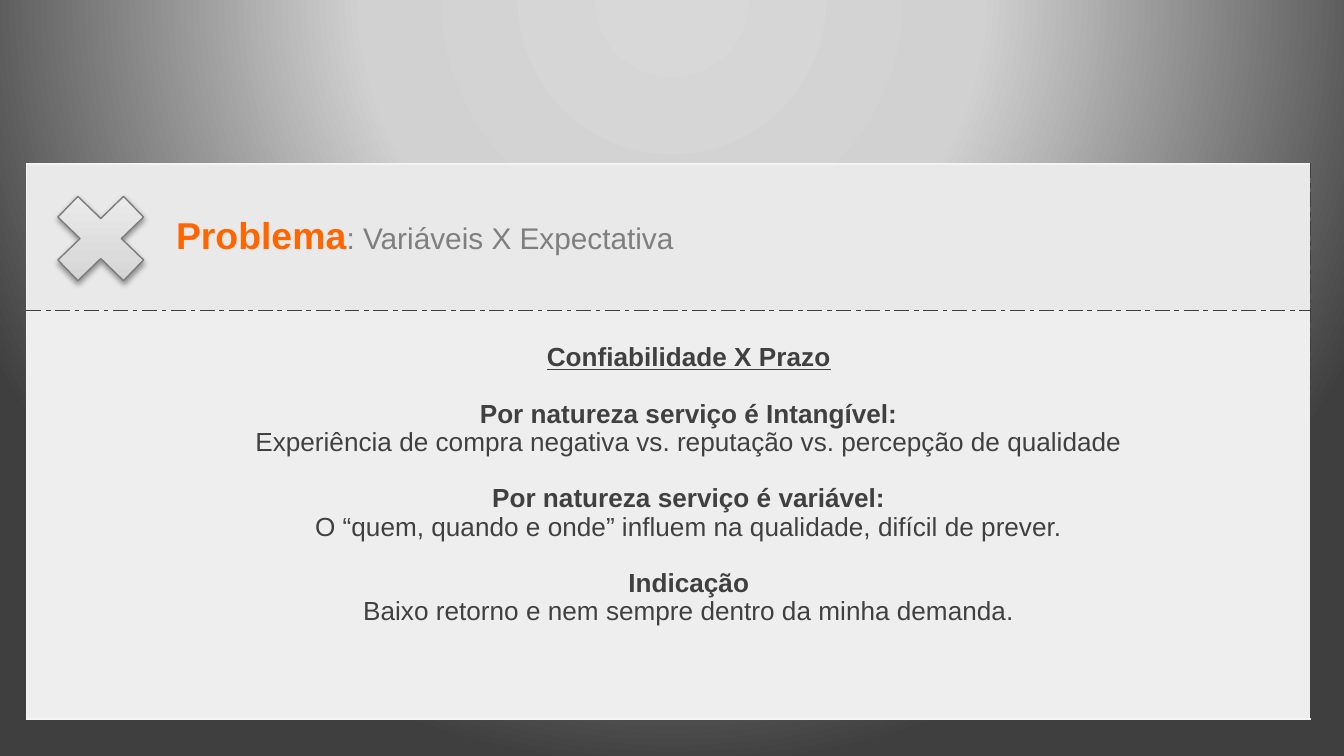
"""Build the slide on the reliability versus deadline problem."""
from lxml.etree import SubElement
from pptx import Presentation
from pptx.dml.color import RGBColor
from pptx.enum.shapes import MSO_SHAPE
from pptx.enum.text import MSO_ANCHOR, PP_ALIGN
from pptx.oxml.ns import qn
from pptx.util import Inches, Pt

ORANGE = RGBColor(0xFF, 0x66, 0x00)
GREY = RGBColor(0x7F, 0x7F, 0x7F)
DARK = RGBColor(0x40, 0x40, 0x40)
OUTLINE = RGBColor(0x7C, 0x7C, 0x7C)
HEADER_FILL = RGBColor(0xE9, 0xE9, 0xE9)
BODY_FILL = RGBColor(0xEE, 0xEE, 0xEE)
PALE_EDGE = RGBColor(0xF4, 0xF4, 0xF4)
DARK_EDGE = RGBColor(0x3F, 0x3F, 0x3F)
BLACK = RGBColor(0, 0, 0)
BACKDROP = [(0, RGBColor(0xD8, 0xD8, 0xD8)), (40, RGBColor(0xD1, 0xD1, 0xD1)), (100, DARK_EDGE)]
CROSS_FILL = [(0, RGBColor(0xCC, 0xCC, 0xCC)), (35, RGBColor(0xDB, 0xDB, 0xDB)),
              (100, RGBColor(0xF1, 0xF1, 0xF1))]

TITLE = [("Problema", 20, ORANGE, True), (": Variáveis X Expectativa", 16, GREY, False)]
HEADING = "Confiabilidade X Prazo"
POINTS = [
    ("Por natureza serviço é Intangível:",
     "Experiência de compra negativa vs. reputação vs. percepção de qualidade"),
    ("Por natureza serviço é variável:",
     "O “quem, quando e onde” influem na qualidade, difícil de prever."),
    ("Indicação", "Baixo retorno e nem sempre dentro da minha demanda."),
]
COLUMNS = [1.05, 8.5]
ROWS = [1.09, 3.04]
PALE = (PALE_EDGE, 0.75, "solid")
DASHED = (DARK_EDGE, 0.25, "sysDashDot")
BORDERS = {
    (0, 0): {"L": PALE, "T": PALE, "B": DASHED},
    (0, 1): {"R": DASHED, "T": PALE, "B": DASHED},
    (1, 0): {"L": PALE, "R": DASHED, "T": DASHED, "B": PALE},
    (1, 1): {"R": DASHED, "T": DASHED, "B": PALE},
}


def add_color(parent, color, alpha=None):
    tone = SubElement(parent, qn("a:srgbClr"), val=str(color))
    if alpha is not None:
        SubElement(tone, qn("a:alpha"), val=str(alpha * 1000))


def set_gradient(fill, owner, stops):
    fill.gradient()
    gradient = owner.find(".//" + qn("a:gradFill"))
    for child in list(gradient):
        gradient.remove(child)
    stop_list = SubElement(gradient, qn("a:gsLst"))
    for position, color in stops:
        add_color(SubElement(stop_list, qn("a:gs"), pos=str(position * 1000)), color)
    return gradient


def set_borders(cell, edges):
    properties = cell._tc.get_or_add_tcPr()
    for index, side in enumerate("LRTB"):
        line = SubElement(properties, qn(f"a:ln{side}"))
        properties.insert(index, line)
        if side not in edges:
            SubElement(line, qn("a:noFill"))
            continue
        color, width, dash = edges[side]
        line.set("w", str(Pt(width)))
        add_color(SubElement(line, qn("a:solidFill")), color)
        SubElement(line, qn("a:prstDash"), val=dash)


def add_run(paragraph, text, size, color, bold, underline=False):
    run = paragraph.add_run()
    run.text = text
    font = run.font
    font.name, font.size, font.bold, font.underline = "Arial", Pt(size), bold, underline
    font.color.rgb = color


def main():
    presentation = Presentation()
    presentation.slide_width = Inches(10)
    presentation.slide_height = presentation.slide_width * 9 // 16
    slide = presentation.slides.add_slide(presentation.slide_layouts[6])
    backdrop = set_gradient(slide.background.fill, slide.element, BACKDROP)
    circle = SubElement(backdrop, qn("a:path"), path="circle")
    SubElement(circle, qn("a:fillToRect"), l="50000", t="-80000", r="50000", b="180000")

    panel = slide.shapes.add_table(2, 2, Inches(0.2), Inches(1.22),
                                   Inches(sum(COLUMNS)), Inches(sum(ROWS))).table
    panel.first_row = panel.horz_banding = False
    for column, width in zip(panel.columns, COLUMNS):
        column.width = Inches(width)
    for row, height in zip(panel.rows, ROWS):
        row.height = Inches(height)
    for (row, column), edges in BORDERS.items():
        cell = panel.cell(row, column)
        cell.fill.solid()
        cell.fill.fore_color.rgb = BODY_FILL if row else HEADER_FILL
        cell.margin_left = cell.margin_right = Inches(0.06)
        cell.margin_top = cell.margin_bottom = Inches(0.03)
        set_borders(cell, edges)

    header = panel.cell(0, 1)
    header.vertical_anchor = MSO_ANCHOR.MIDDLE
    title = header.text_frame.paragraphs[0]
    title.line_spacing = 0.96
    for part in TITLE:
        add_run(title, *part)

    body = panel.cell(1, 0)
    body.merge(panel.cell(1, 1))
    body.margin_top = Inches(0.25)
    lines = [(HEADING, True, True, 0)]
    for label, detail in POINTS:
        lines += [(label, True, False, 15.2), (detail, False, False, 0)]
    for index, (text, bold, underline, gap) in enumerate(lines):
        paragraph = body.text_frame.add_paragraph() if index else body.text_frame.paragraphs[0]
        paragraph.alignment = PP_ALIGN.CENTER
        paragraph.level = 1
        paragraph.line_spacing = 0.96
        paragraph.space_before = Pt(gap)
        paragraph._p.get_or_add_pPr().set("marL", str(Inches(0.3)))
        add_run(paragraph, text, 14, DARK, bold, underline)

    cross = slide.shapes.add_shape(MSO_SHAPE.MATH_MULTIPLY, Inches(0.28), Inches(1.32),
                                   Inches(0.94), Inches(0.91))
    cross_gradient = set_gradient(cross.fill, cross.element, CROSS_FILL)
    SubElement(cross_gradient, qn("a:lin"), ang=str(270 * 60000), scaled="0")
    cross.line.color.rgb = OUTLINE
    cross.line.width = Pt(0.75)
    cross.shadow.inherit = False
    shadow = SubElement(cross.element.spPr.find(qn("a:effectLst")), qn("a:outerShdw"),
                        blurRad=str(Pt(3.1)), dist=str(Pt(1.6)), dir=str(90 * 60000), rotWithShape="0")
    add_color(shadow, BLACK, 38)

    presentation.save("out.pptx")


if __name__ == "__main__":
    main()
